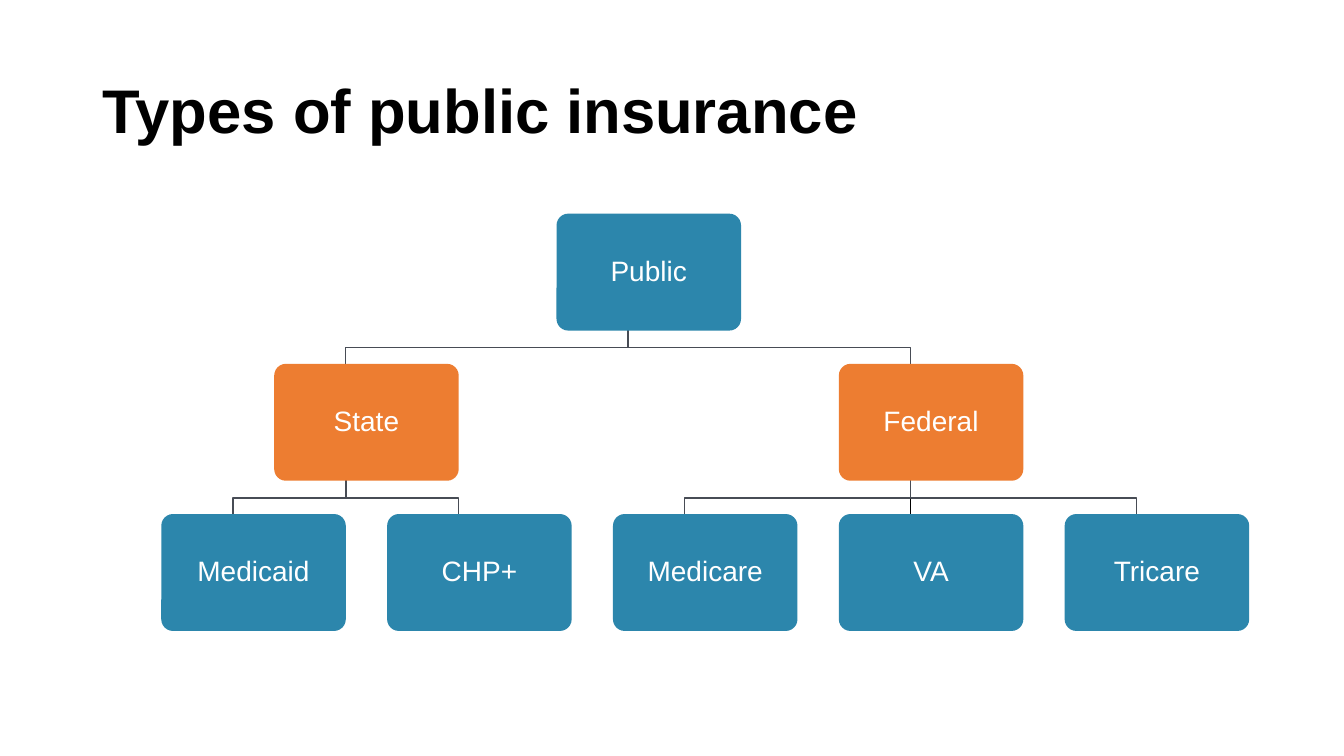
from pptx import Presentation
from pptx.dml.color import RGBColor
from pptx.enum.shapes import MSO_CONNECTOR, MSO_SHAPE
from pptx.enum.text import MSO_ANCHOR, PP_ALIGN
from pptx.oxml.ns import qn
from pptx.util import Inches, Pt
from lxml import etree

ROUNDED = MSO_SHAPE.ROUNDED_RECTANGLE
STRAIGHT = MSO_CONNECTOR.STRAIGHT
MIDDLE = MSO_ANCHOR.MIDDLE
LEFT, CENTER = PP_ALIGN.LEFT, PP_ALIGN.CENTER

TITLE = "Types of public insurance"
TREE = {
    "Public": ["State", "Federal"],
    "State": ["Medicaid", "CHP+"],
    "Federal": ["Medicare", "VA", "Tricare"],
}
ROWS = [
    ("2C86AC", ["Public"]),
    ("ED7D31", ["State", "Federal"]),
    ("2C86AC", ["Medicaid", "CHP+", "Medicare", "VA", "Tricare"]),
]
FONT = "Arial"
WHITE, BLACK, GREY = "FFFFFF", "000000", "474C55"

SLIDE_WIDTH, SLIDE_HEIGHT = 13.33, 7.5
GRID_LEFT, GRID_TOP = 1.6, 2.12
COLUMN_STEP, ROW_STEP = 2.24, 1.49
BOX_WIDTH, BOX_HEIGHT = 1.83, 1.16
LINE_X, LINE_START, LINE_BEND = 0.71, 0.97, 1.33
INSET = 0.13


def color(value):
    return RGBColor.from_string(value)


def write(shape, text, size, ink, align, bold=False):
    frame = shape.text_frame
    frame.word_wrap = True
    frame.vertical_anchor = MIDDLE
    para = frame.paragraphs[0]
    para.alignment = align
    para.line_spacing = 0.9
    span = para.add_run()
    span.text = text
    span.font.name = FONT
    span.font.size = Pt(size)
    span.font.bold = bold
    span.font.color.rgb = color(ink)
    return frame


def place_nodes():
    columns = {name: index for index, name in enumerate(ROWS[-1][1])}
    for _, names in reversed(ROWS[:-1]):
        for name in names:
            children = TREE[name]
            columns[name] = sum(columns[child] for child in children) / len(children)
    return {
        name: (GRID_LEFT + columns[name] * COLUMN_STEP, GRID_TOP + row * ROW_STEP)
        for row, (_, names) in enumerate(ROWS)
        for name in names
    }


def draw_branch(page, parent, child):
    start_x, end_x = Inches(parent[0] + LINE_X), Inches(child[0] + LINE_X)
    start_y, bend_y = Inches(parent[1] + LINE_START), Inches(parent[1] + LINE_BEND)
    end_y = Inches(child[1] + 0.01)
    if abs(start_x - end_x) < Inches(0.01):
        branch = page.shapes.add_connector(STRAIGHT, start_x, start_y, end_x, end_y)
        branch.line.color.rgb = color(BLACK)
        etree.SubElement(branch._element.spPr, qn("a:effectLst"))
    else:
        outline = page.shapes.build_freeform(start_x, start_y)
        outline.add_line_segments(
            [(start_x, bend_y), (end_x, bend_y), (end_x, end_y)], close=False
        )
        branch = outline.convert_to_shape()
        branch.fill.background()
        branch.line.color.rgb = color(GREY)
        branch.shadow.inherit = False
    branch.line.width = Pt(1)


def draw_box(page, name, position, fill):
    left, top = position
    box = page.shapes.add_shape(
        ROUNDED, Inches(left), Inches(top), Inches(BOX_WIDTH), Inches(BOX_HEIGHT)
    )
    box.adjustments[0] = 0.1
    box.shadow.inherit = False
    box.fill.solid()
    box.fill.fore_color.rgb = color(fill)
    box.line.fill.background()
    frame = write(box, name, 20, WHITE, CENTER)
    frame.margin_left = frame.margin_right = Inches(INSET)
    frame.margin_top = frame.margin_bottom = Inches(INSET)


def main():
    deck = Presentation()
    deck.slide_width, deck.slide_height = Inches(SLIDE_WIDTH), Inches(SLIDE_HEIGHT)
    page = deck.slides.add_slide(deck.slide_layouts[6])

    title = page.shapes.add_textbox(Inches(0.92), Inches(0.4), Inches(11.5), Inches(1.45))
    write(title, TITLE, 44, BLACK, LEFT, bold=True)

    nodes = place_nodes()
    for parent, children in TREE.items():
        for child in children:
            draw_branch(page, nodes[parent], nodes[child])
    for fill, names in ROWS:
        for name in names:
            draw_box(page, name, nodes[name], fill)

    deck.save("out.pptx")


if __name__ == "__main__":
    main()
